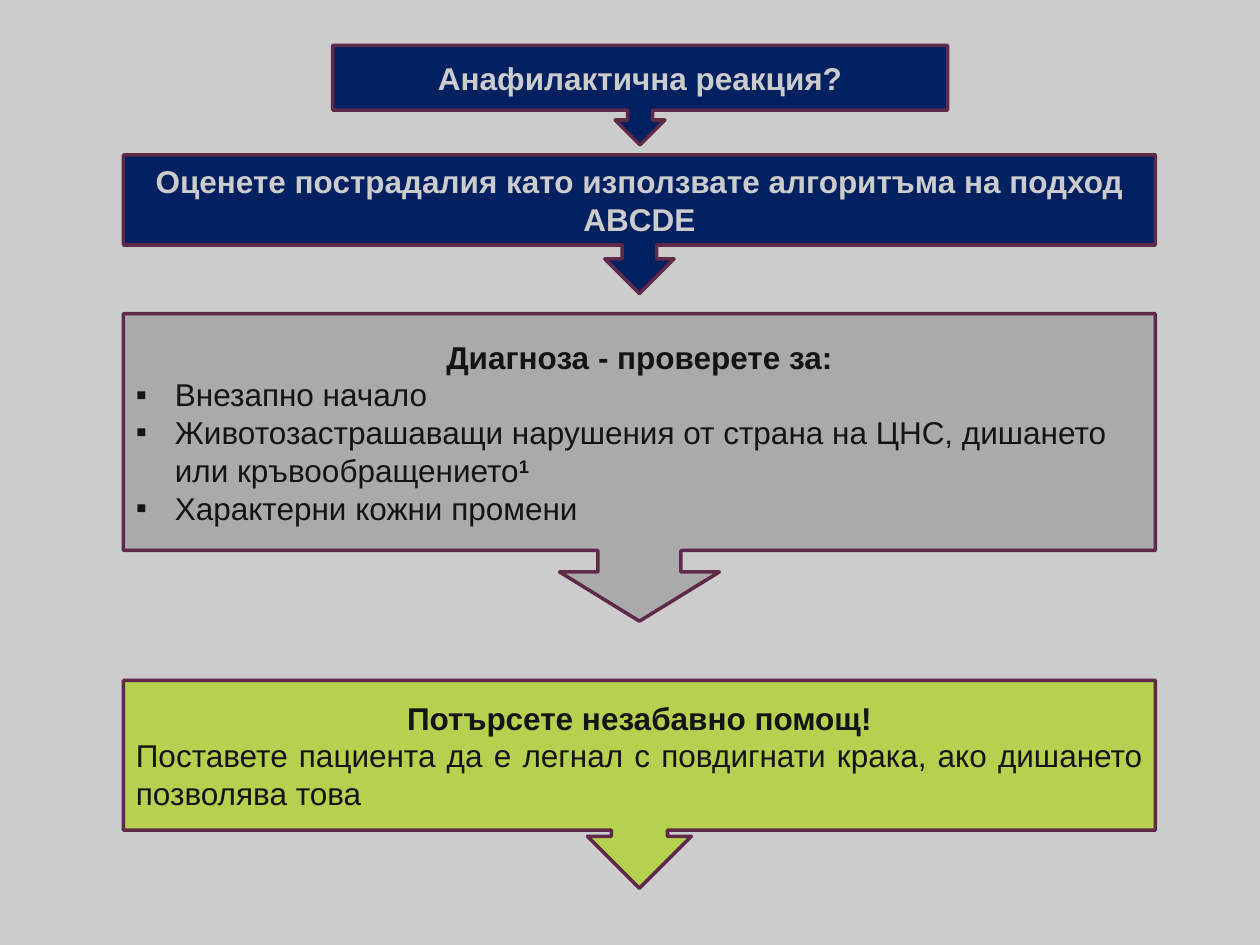
from dataclasses import dataclass

from lxml.etree import SubElement
from pptx import Presentation
from pptx.dml.color import RGBColor
from pptx.enum.shapes import MSO_SHAPE
from pptx.enum.text import MSO_ANCHOR, PP_ALIGN
from pptx.oxml.ns import qn
from pptx.util import Inches, Pt


@dataclass(frozen=True)
class Theme:
    background: RGBColor = RGBColor.from_string("CCCCCC")
    navy: RGBColor = RGBColor.from_string("002060")
    gray: RGBColor = RGBColor.from_string("AAAAAA")
    green: RGBColor = RGBColor.from_string("B5D14F")
    outline: RGBColor = RGBColor.from_string("5F2A49")
    dark_text: RGBColor = RGBColor.from_string("141414")
    light_text: RGBColor = RGBColor.from_string("CCCCCC")
    font: str = "Arial"
    text_size: Pt = Pt(18)
    outline_width: Pt = Pt(2)


theme = Theme()


def format_run(run, color, bold):
    run.font.name = theme.font
    run.font.size = theme.text_size
    run.font.color.rgb = color
    run.font.bold = bold


def add_bullet(paragraph):
    properties = paragraph._p.get_or_add_pPr()
    properties.set("marL", str(Inches(0.31)))
    properties.set("indent", str(Inches(-0.31)))
    SubElement(properties, qn("a:buFont"), typeface=theme.font)
    SubElement(properties, qn("a:buChar"), char="▪")


presentation = Presentation()
presentation.slide_width = Inches(10)
presentation.slide_height = Inches(7.5)
slide = presentation.slides.add_slide(presentation.slide_layouts[6])
slide.background.fill.solid()
slide.background.fill.fore_color.rgb = theme.background

default_arrow = (0.25, 0.25, 0.25, 0.65)
steps = [
    (2.64, 0.36, 4.88, 0.79, default_arrow, theme.navy, theme.light_text,
     [("Анафилактична реакция?", "heading")]),
    (0.98, 1.23, 8.19, 1.1, default_arrow, theme.navy, theme.light_text,
     [("Оценете пострадалия като използвате алгоритъма на подход АBCDE", "heading")]),
    (0.98, 2.49, 8.19, 2.44, (0.27, 0.26, 0.16, 0.77), theme.gray, theme.dark_text,
     [("Диагноза - проверете за:", "heading"),
      ("Внезапно начало", "bullet"),
      ("Животозастрашаващи нарушения от страна на ЦНС, дишането или кръвообращението",
       "footnoted bullet"),
      ("Характерни кожни промени", "bullet")]),
    (0.98, 5.4, 8.19, 1.65, (0.27, 0.25, 0.25, 0.72), theme.green, theme.dark_text,
     [("Потърсете незабавно помощ!", "heading"),
      ("Поставете пациента да е легнал с повдигнати крака, ако дишането позволява това",
       "body")]),
]
alignments = {"heading": PP_ALIGN.CENTER, "body": PP_ALIGN.JUSTIFY}

for left, top, width, height, arrow, fill, text_color, lines in steps:
    callout = slide.shapes.add_shape(
        MSO_SHAPE.DOWN_ARROW_CALLOUT,
        Inches(left), Inches(top), Inches(width), Inches(height),
    )
    for index, value in enumerate(arrow):
        callout.adjustments[index] = value
    callout.shadow.inherit = False
    callout.fill.solid()
    callout.fill.fore_color.rgb = fill
    callout.line.color.rgb = theme.outline
    callout.line.width = theme.outline_width

    text_frame = callout.text_frame
    text_frame.word_wrap = True
    text_frame.vertical_anchor = MSO_ANCHOR.MIDDLE
    text_frame.text = "\n".join(text for text, role in lines)
    for paragraph, (text, role) in zip(text_frame.paragraphs, lines):
        paragraph.alignment = alignments.get(role, PP_ALIGN.LEFT)
        if "bullet" in role:
            add_bullet(paragraph)
        format_run(paragraph.runs[0], text_color, role == "heading")
        if "footnoted" in role:
            footnote = paragraph.add_run()
            footnote.text = "1"
            format_run(footnote, text_color, True)
            footnote._r.get_or_add_rPr().set("baseline", "30000")

presentation.save("out.pptx")
